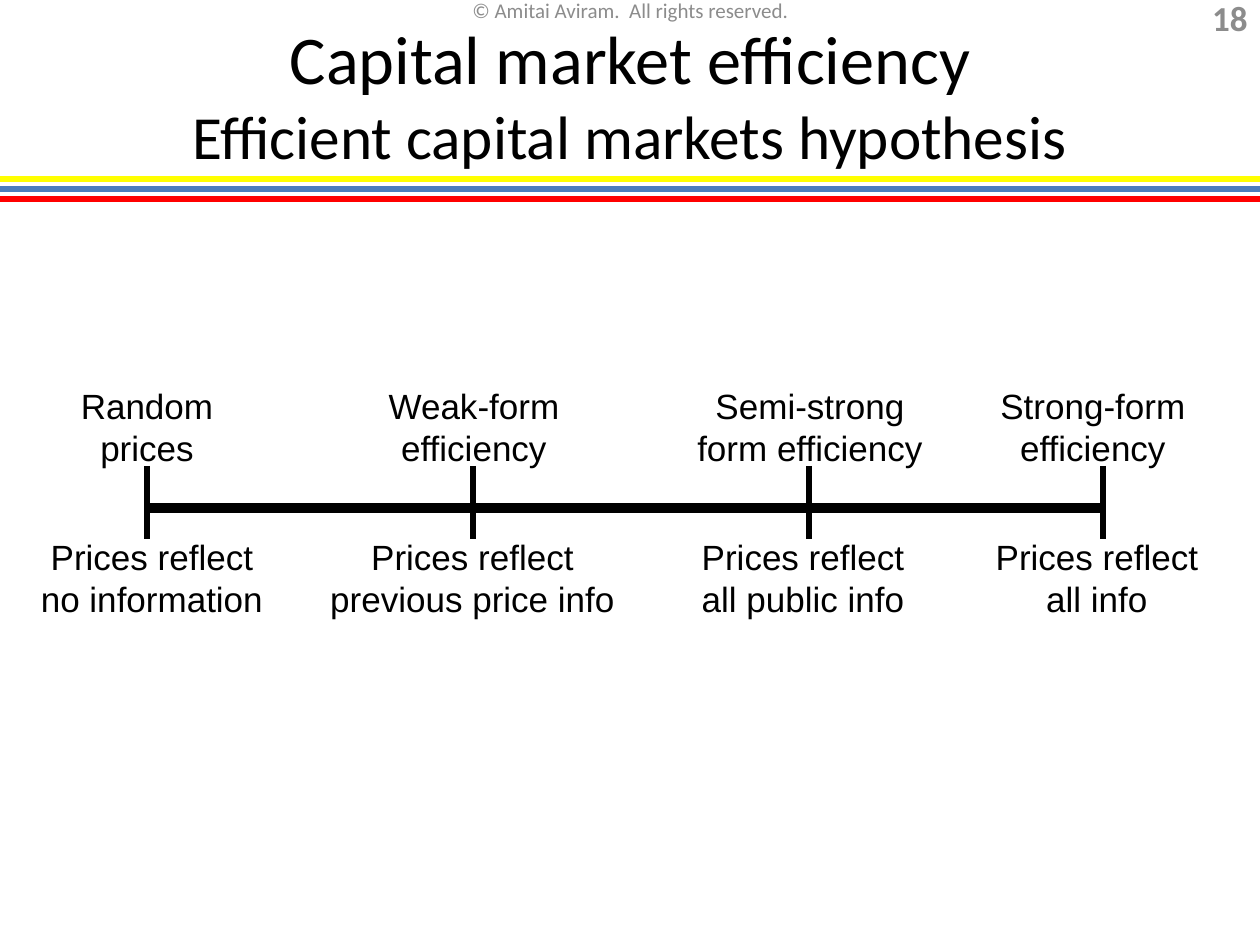
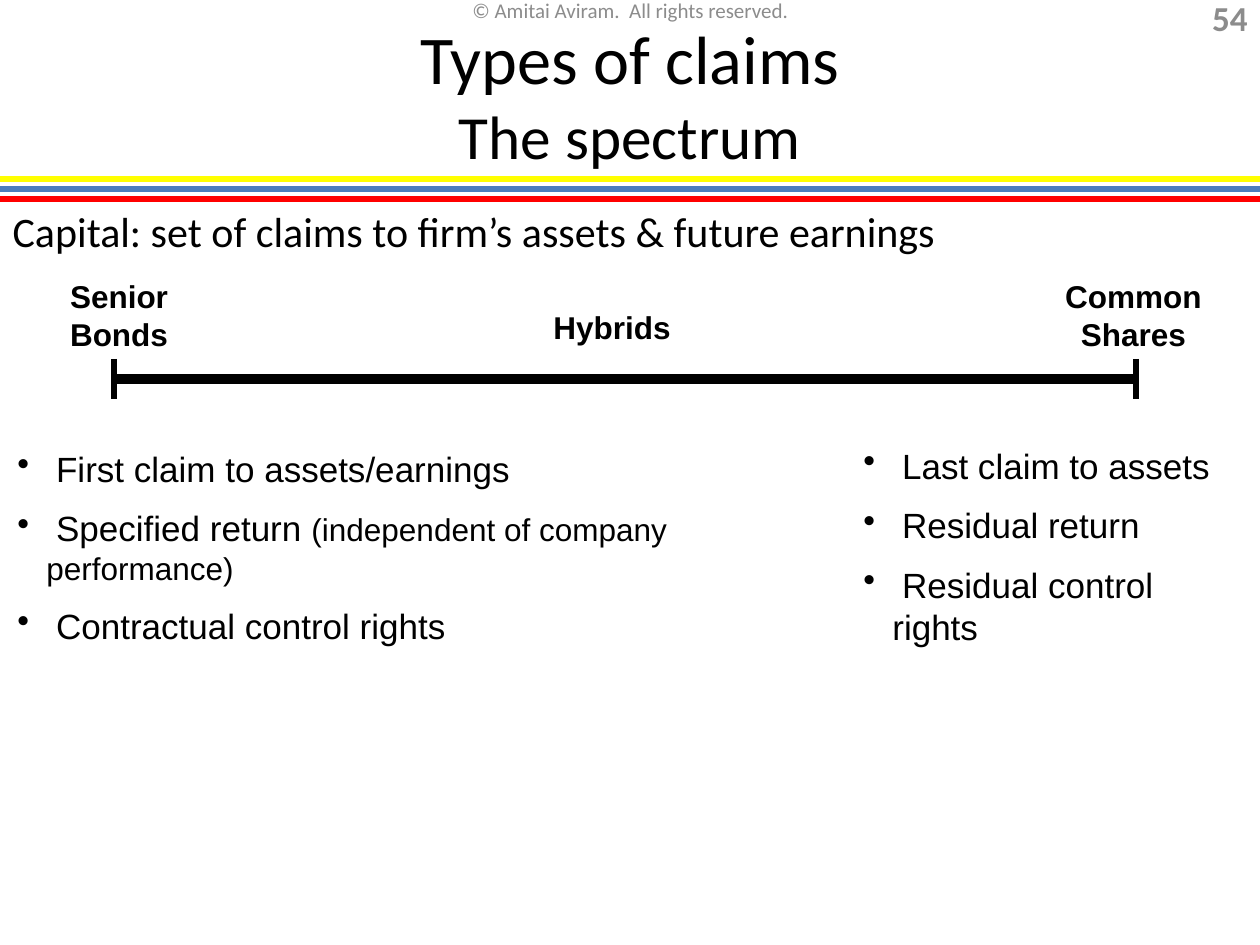
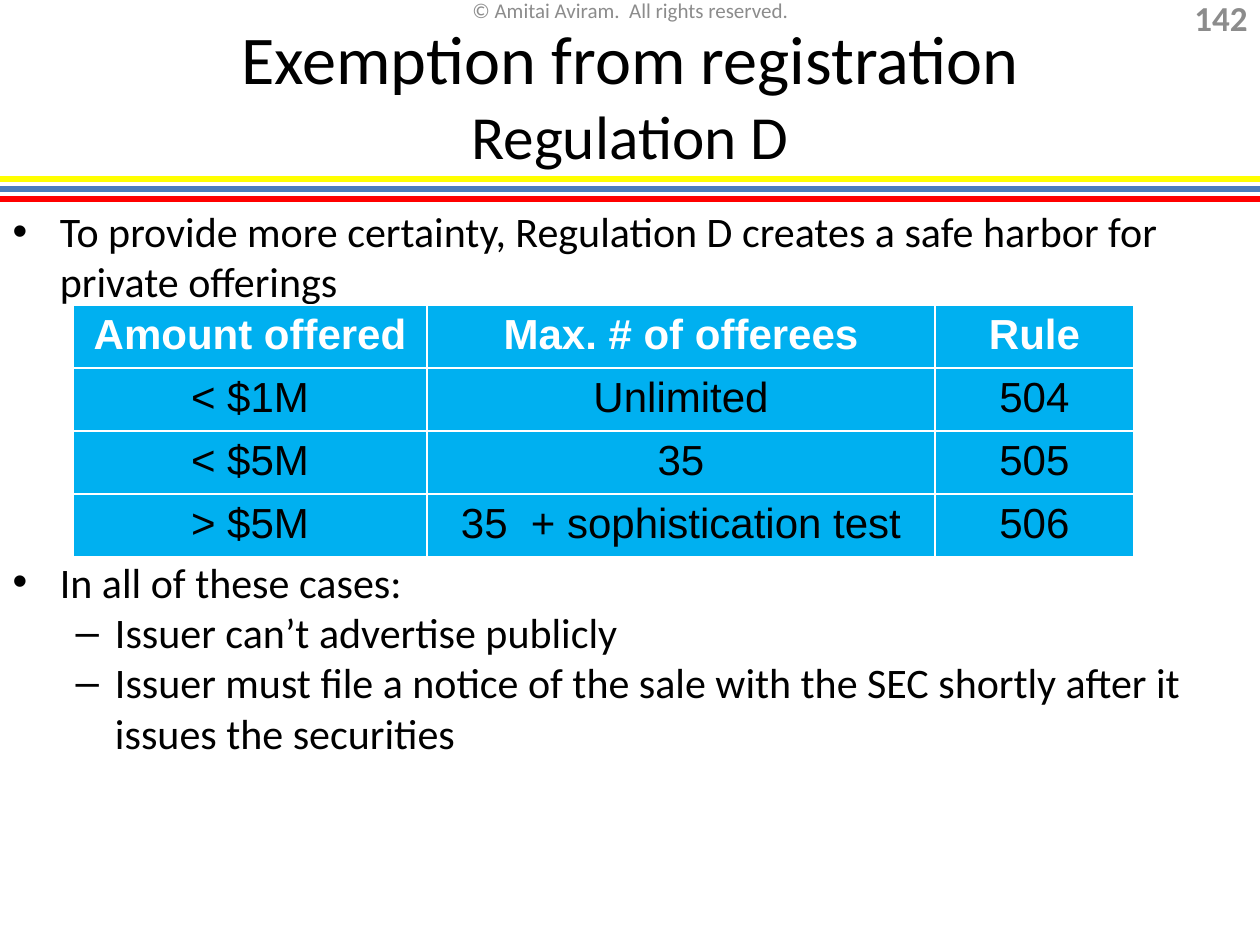
from dataclasses import dataclass
from typing import NamedTuple

from lxml.etree import SubElement
from pptx import Presentation
from pptx.dml.color import RGBColor
from pptx.enum.shapes import MSO_CONNECTOR
from pptx.enum.text import MSO_ANCHOR, MSO_AUTO_SIZE, PP_ALIGN
from pptx.oxml.ns import qn
from pptx.util import Emu, Pt

PX_PER_INCH = 126
SLIDE_W, SLIDE_H = 1260, 945


def px(n: int) -> Emu:
    return Emu(round(n * 914400 / PX_PER_INCH))


@dataclass(frozen=True)
class Theme:
    black: RGBColor = RGBColor(0x00, 0x00, 0x00)
    white: RGBColor = RGBColor(0xFF, 0xFF, 0xFF)
    grey: RGBColor = RGBColor(0x8C, 0x8C, 0x8C)
    yellow: RGBColor = RGBColor(0xFF, 0xFF, 0x00)
    blue: RGBColor = RGBColor(0x4B, 0x7E, 0xBC)
    red: RGBColor = RGBColor(0xFF, 0x00, 0x00)
    cell: RGBColor = RGBColor(0x00, 0xB0, 0xF0)
    heading_font: str = "Calibri"
    label_font: str = "Arial"
    title: Pt = Pt(39)
    subtitle: Pt = Pt(35)
    body: Pt = Pt(24)
    label: Pt = Pt(20)
    small: Pt = Pt(18)
    notice: Pt = Pt(12)
    thin: Pt = Pt(3)
    thick: Pt = Pt(6)


T = Theme()


class Box(NamedTuple):
    x: int
    y: int
    w: int
    h: int


class Label(NamedTuple):
    text: str
    box: Box


class Axis(NamedTuple):
    y: int
    top: int
    bottom: int
    ticks: tuple[int, ...]


class Item(NamedTuple):
    text: str
    level: int = 0
    gap: int = 0
    bullet: bool = True


class Point(NamedTuple):
    text: str
    detail: str = ""


# Shared drawing helpers
def style(font, name: str, size: Pt, color: RGBColor = T.black, bold: bool = False) -> None:
    font.name, font.size, font.bold = name, size, bold
    font.color.rgb = color


def place(sp, box: Box) -> None:
    sp.left, sp.top, sp.width, sp.height = map(px, box)


def add_line(slide, x1: int, y1: int, x2: int, y2: int, color: RGBColor, width: Pt) -> None:
    line = slide.shapes.add_connector(MSO_CONNECTOR.STRAIGHT, px(x1), px(y1), px(x2), px(y2))
    line.line.color.rgb = color
    line.line.width = width
    SubElement(line._element.spPr, qn("a:effectLst"))


def add_box(slide, box: Box):
    tf = slide.shapes.add_textbox(*map(px, box)).text_frame
    tf.word_wrap = True
    return tf


def add_label(slide, label: Label, size: Pt = T.label, bold: bool = False) -> None:
    p = add_box(slide, label.box).paragraphs[0]
    p.text = label.text
    p.alignment = PP_ALIGN.CENTER
    style(p.font, T.label_font, size, bold=bold)


def add_header(slide, label: Label, align: PP_ALIGN, size: Pt, bold: bool = False) -> None:
    tf = add_box(slide, label.box)
    tf.vertical_anchor = MSO_ANCHOR.MIDDLE
    tf.margin_top = tf.margin_bottom = 0
    p = tf.paragraphs[0]
    p.text = label.text
    p.alignment = align
    style(p.font, T.heading_font, size, T.grey, bold)


def add_axis(slide, axis: Axis) -> None:
    add_line(slide, axis.ticks[0], axis.y, axis.ticks[-1], axis.y, T.black, T.thick)
    for x in axis.ticks:
        add_line(slide, x, axis.top, x, axis.bottom, T.black, T.thin)


def add_points(slide, box: Box, points: list[Point]) -> None:
    tf = add_box(slide, box)
    for i, point in enumerate(points):
        p = tf.add_paragraph() if i else tf.paragraphs[0]
        p.space_before = Pt(10 if i else 0)
        style(p.font, T.label_font, T.label)
        p.add_run().text = point.text
        if point.detail:
            r = p.add_run()
            r.text = point.detail
            r.font.size = T.small
        pPr = p._p.get_or_add_pPr()
        pPr.set("marL", str(px(29)))
        pPr.set("indent", str(-px(29)))
        bullet = pPr.makeelement(qn("a:buChar"), {"char": "•"})
        pPr.find(qn("a:defRPr")).addprevious(bullet)


def fill_body(slide, items: list[Item]) -> None:
    body = slide.placeholders[1]
    place(body, Box(0, 199, SLIDE_W, 746))
    tf = body.text_frame
    tf.auto_size = MSO_AUTO_SIZE.NONE
    for i, item in enumerate(items):
        p = tf.add_paragraph() if i else tf.paragraphs[0]
        p.text, p.level = item.text, item.level
        p.space_before = px(item.gap)
        style(p.font, T.heading_font, T.body)
        if not item.bullet:
            pPr = p._p.get_or_add_pPr()
            pPr.find(qn("a:defRPr")).addprevious(pPr.makeelement(qn("a:buNone"), {}))


def add_table(slide, box: Box, widths: list[int], rows: list[list[str]]) -> None:
    table = slide.shapes.add_table(len(rows), len(widths), *map(px, box)).table
    table.horz_banding = False
    for column, width in zip(table.columns, widths):
        column.width = px(width)
    for i, row in enumerate(rows):
        table.rows[i].height = px(box.h // len(rows))
        for j, text in enumerate(row):
            cell = table.cell(i, j)
            cell.fill.solid()
            cell.fill.fore_color.rgb = T.cell
            p = cell.text_frame.paragraphs[0]
            p.alignment = PP_ALIGN.CENTER
            r = p.add_run()
            r.text = text
            style(r.font, T.label_font, T.body, T.black if i else T.white, i == 0)


# Slide frame: title, colour bands, notice and page number
def new_slide(prs, layout: str, title: str, subtitle: str, number: int):
    slide = prs.slides.add_slide(prs.slide_layouts.get_by_name(layout))
    for y, color in ((189, T.blue), (199, T.red), (179, T.yellow)):
        add_line(slide, 0, y, SLIDE_W, y, color, T.thin)
    notice = Label("© Amitai Aviram.  All rights reserved.", Box(431, 0, 399, 21))
    add_header(slide, notice, PP_ALIGN.CENTER, T.notice)
    page = Label(str(number), Box(1176, 2, 84, 30))
    add_header(slide, page, PP_ALIGN.RIGHT, T.label, bold=True)

    place(slide.shapes.title, Box(0, 0, SLIDE_W, 179))
    tf = slide.shapes.title.text_frame
    tf.auto_size = MSO_AUTO_SIZE.NONE
    tf.vertical_anchor = MSO_ANCHOR.MIDDLE
    tf.margin_top, tf.margin_bottom = px(9), 0
    p = tf.paragraphs[0]
    p.alignment = PP_ALIGN.CENTER
    style(p.font, T.heading_font, T.title)
    p.add_run().text = title
    p.add_line_break()
    r = p.add_run()
    r.text = subtitle
    r.font.size = T.subtitle
    return slide


def efficiency_slide(prs) -> None:
    slide = new_slide(prs, "Title Only", "Capital market efficiency",
                      "Efficient capital markets hypothesis", 18)
    add_axis(slide, Axis(508, 466, 539, (147, 473, 809, 1103)))
    form_y, meaning_y, h = 378, 529, 97
    for label in (
        Label("Random prices", Box(63, form_y, 168, h)),
        Label("Weak-form efficiency", Box(360, form_y, 228, h)),
        Label("Semi-strong form efficiency", Box(672, form_y, 276, h)),
        Label("Strong-form efficiency", Box(979, form_y, 228, h)),
        Label("Prices reflect no information", Box(21, meaning_y, 262, h)),
        Label("Prices reflect previous price info", Box(315, meaning_y, 315, h)),
        Label("Prices reflect all public info", Box(672, meaning_y, 262, h)),
        Label("Prices reflect all info", Box(966, meaning_y, 262, h)),
    ):
        add_label(slide, label)


def claims_slide(prs) -> None:
    slide = new_slide(prs, "Title and Content", "Types of claims", "The spectrum", 54)
    fill_body(slide, [Item("Capital: set of claims to firm’s assets & future earnings",
                           bullet=False)])
    add_axis(slide, Axis(379, 359, 399, (114, 1136)))
    for label in (
        Label("Senior Bonds", Box(10, 271, 218, 88)),
        Label("Hybrids", Box(483, 302, 258, 50)),
        Label("Common Shares", Box(1039, 271, 189, 88)),
    ):
        add_label(slide, label, T.small, bold=True)
    add_points(slide, Box(5, 441, 857, 180), [
        Point(" First claim to assets/earnings"),
        Point(" Specified return ", "(independent of company performance)"),
        Point(" Contractual control rights"),
    ])
    add_points(slide, Box(851, 438, 404, 180), [
        Point(" Last claim to assets"),
        Point(" Residual return"),
        Point(" Residual control rights"),
    ])


def exemption_slide(prs) -> None:
    slide = new_slide(prs, "Title and Content", "Exemption from registration",
                      "Regulation D", 142)
    fill_body(slide, [
        Item("To provide more certainty, Regulation D creates a safe harbor "
             "for private offerings"),
        Item("In all of these cases:", gap=250),
        Item("Issuer can’t advertise publicly", level=1),
        Item("Issuer must file a notice of the sale with the SEC shortly after "
             "it issues the securities", level=1),
    ])
    add_table(slide, Box(73, 305, 1061, 252), [354, 508, 199], [
        ["Amount offered", "Max. # of offerees", "Rule"],
        ["< $1M", "Unlimited", "504"],
        ["< $5M", "35", "505"],
        ["> $5M", "35  + sophistication test", "506"],
    ])


def main() -> None:
    prs = Presentation()
    prs.slide_width, prs.slide_height = px(SLIDE_W), px(SLIDE_H)
    efficiency_slide(prs)
    claims_slide(prs)
    exemption_slide(prs)
    prs.save("out.pptx")


if __name__ == "__main__":
    main()
